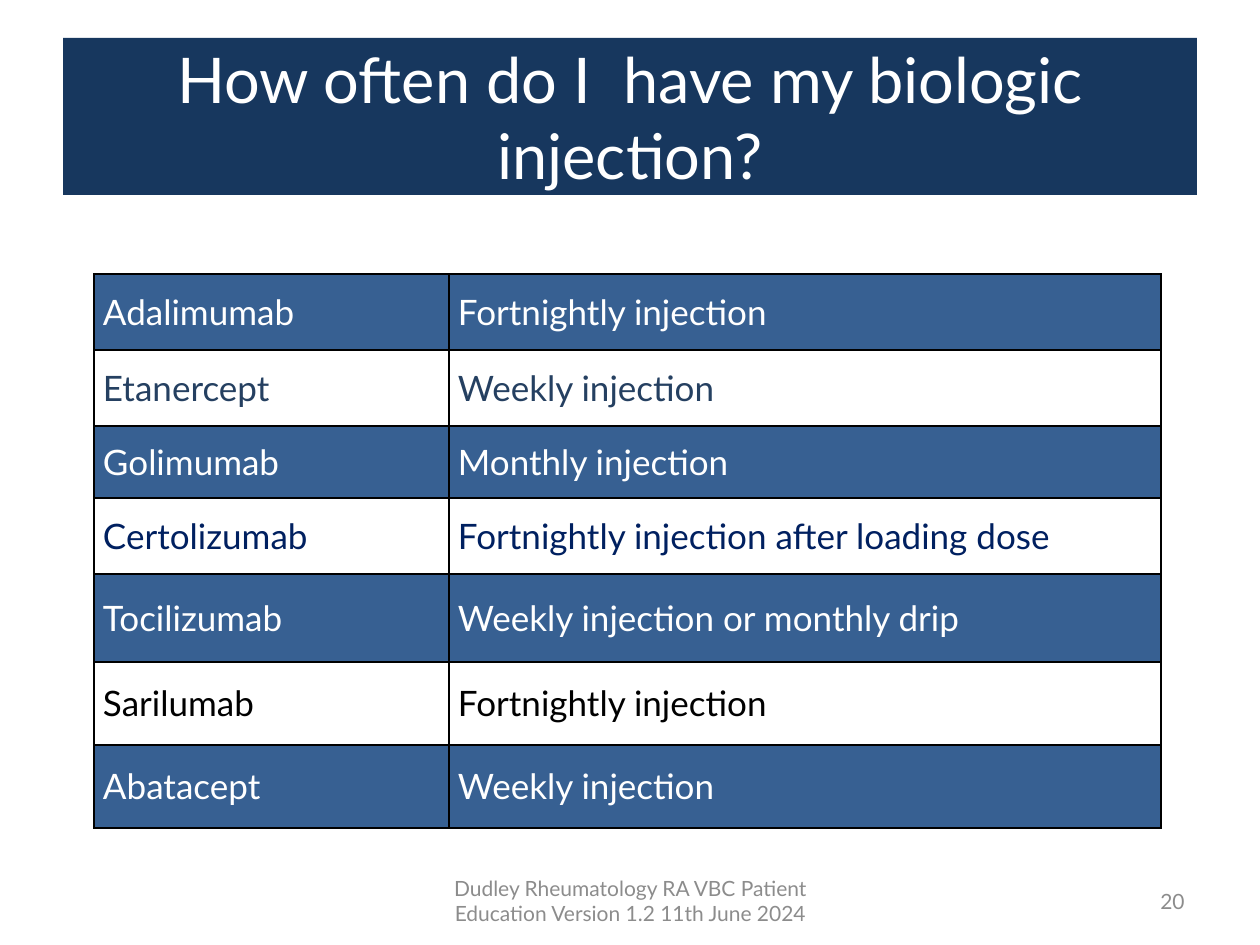
from dataclasses import dataclass

from lxml.etree import SubElement
from pptx import Presentation
from pptx.dml.color import RGBColor
from pptx.enum.text import MSO_ANCHOR, MSO_AUTO_SIZE, PP_ALIGN
from pptx.oxml.ns import qn
from pptx.util import Emu, Pt

PX_PER_INCH = 126


@dataclass(frozen=True)
class Theme:
    """Colours, font and type sizes of the slide."""
    font: str = "Lato"
    banner: str = "17375E"
    band: str = "376092"
    white: str = "FFFFFF"
    slate: str = "254061"
    navy: str = "002060"
    black: str = "000000"
    muted: str = "8C8C8C"
    title_size: int = 36
    table_size: int = 20
    footer_size: int = 12
    border_width: int = 1


THEME = Theme()

TITLE = "How often do I  have my biologic injection?"
FOOTER = "Dudley Rheumatology RA VBC Patient Education Version 1.2 11th June 2024"
PAGE_NUMBER = "20"
COLUMN_WIDTHS = (355, 712)
SCHEDULE = (
    ("Adalimumab", "Fortnightly injection", 76, THEME.white),
    ("Etanercept", "Weekly injection", 76, THEME.slate),
    ("Golimumab", "Monthly injection", 72, THEME.white),
    ("Certolizumab", "Fortnightly injection after loading dose", 76, THEME.navy),
    ("Tocilizumab", "Weekly injection or monthly drip", 88, THEME.white),
    ("Sarilumab", "Fortnightly injection", 83, THEME.black),
    ("Abatacept", "Weekly injection", 83, THEME.white),
)


def px(length):
    """Turn slide pixels into EMU."""
    return Emu(round(length * 914400 / PX_PER_INCH))


def write(text_frame, text, size, colour, align):
    """Set one formatted paragraph in a text frame."""
    text_frame.text = text
    paragraph = text_frame.paragraphs[0]
    paragraph.alignment = align
    font = paragraph.runs[0].font
    font.name = THEME.font
    font.size = Pt(size)
    font.color.rgb = RGBColor.from_string(colour)


def add_borders(cell):
    """Draw a thin line on all four sides of a cell."""
    properties = cell._tc.get_or_add_tcPr()
    for side in ("a:lnL", "a:lnR", "a:lnT", "a:lnB"):
        line = SubElement(properties, qn(side), w=str(Pt(THEME.border_width)))
        fill = SubElement(line, qn("a:solidFill"))
        SubElement(fill, qn("a:srgbClr"), val=THEME.black)


def place_title(slide, left, top, width, height):
    """Turn the title placeholder into the banner."""
    title = slide.shapes.title
    title.left, title.top = px(left), px(top)
    title.width, title.height = px(width), px(height)
    title.fill.solid()
    title.fill.fore_color.rgb = RGBColor.from_string(THEME.banner)
    write(title.text_frame, TITLE, THEME.title_size, THEME.white, PP_ALIGN.CENTER)
    title.text_frame.vertical_anchor = MSO_ANCHOR.MIDDLE
    title.text_frame.auto_size = MSO_AUTO_SIZE.NONE


def format_cell(cell, text, colour, banded):
    """Fill, border and write one table cell."""
    add_borders(cell)
    if banded:
        cell.fill.solid()
        cell.fill.fore_color.rgb = RGBColor.from_string(THEME.band)
    else:
        cell.fill.background()
    cell.margin_left = cell.margin_right = px(9)
    cell.margin_top = cell.margin_bottom = 0
    cell.vertical_anchor = MSO_ANCHOR.MIDDLE
    write(cell.text_frame, text, THEME.table_size, colour, PP_ALIGN.JUSTIFY)


def place_schedule(slide, left, top):
    """Add the table of drugs and injection intervals."""
    height = sum(row_height for _, _, row_height, _ in SCHEDULE)
    schedule = slide.shapes.add_table(
        len(SCHEDULE), len(COLUMN_WIDTHS),
        px(left), px(top), px(sum(COLUMN_WIDTHS)), px(height),
    ).table
    schedule.first_row = schedule.horz_banding = False
    for column, width in zip(schedule.columns, COLUMN_WIDTHS):
        column.width = px(width)
    for index, (drug, interval, row_height, colour) in enumerate(SCHEDULE):
        row = schedule.rows[index]
        row.height = px(row_height)
        for cell, text in zip(row.cells, (drug, interval)):
            format_cell(cell, text, colour, banded=index % 2 == 0)


def place_footer_text(slide, text, align, left, top, width, height):
    """Add one muted text at the foot of the slide."""
    footer = slide.shapes.add_textbox(px(left), px(top), px(width), px(height))
    footer.text_frame.word_wrap = True
    footer.text_frame.vertical_anchor = MSO_ANCHOR.MIDDLE
    write(footer.text_frame, text, THEME.footer_size, THEME.muted, align)


def main():
    """Build and save the slide."""
    presentation = Presentation()
    presentation.slide_width, presentation.slide_height = px(1260), px(945)
    slide = presentation.slides.add_slide(presentation.slide_layouts[5])
    place_title(slide, 63, 38, 1134, 157)
    place_schedule(slide, 94, 274)
    place_footer_text(slide, FOOTER, PP_ALIGN.CENTER, 431, 876, 399, 50)
    place_footer_text(slide, PAGE_NUMBER, PP_ALIGN.RIGHT, 903, 876, 294, 50)
    presentation.save("out.pptx")


if __name__ == "__main__":
    main()
